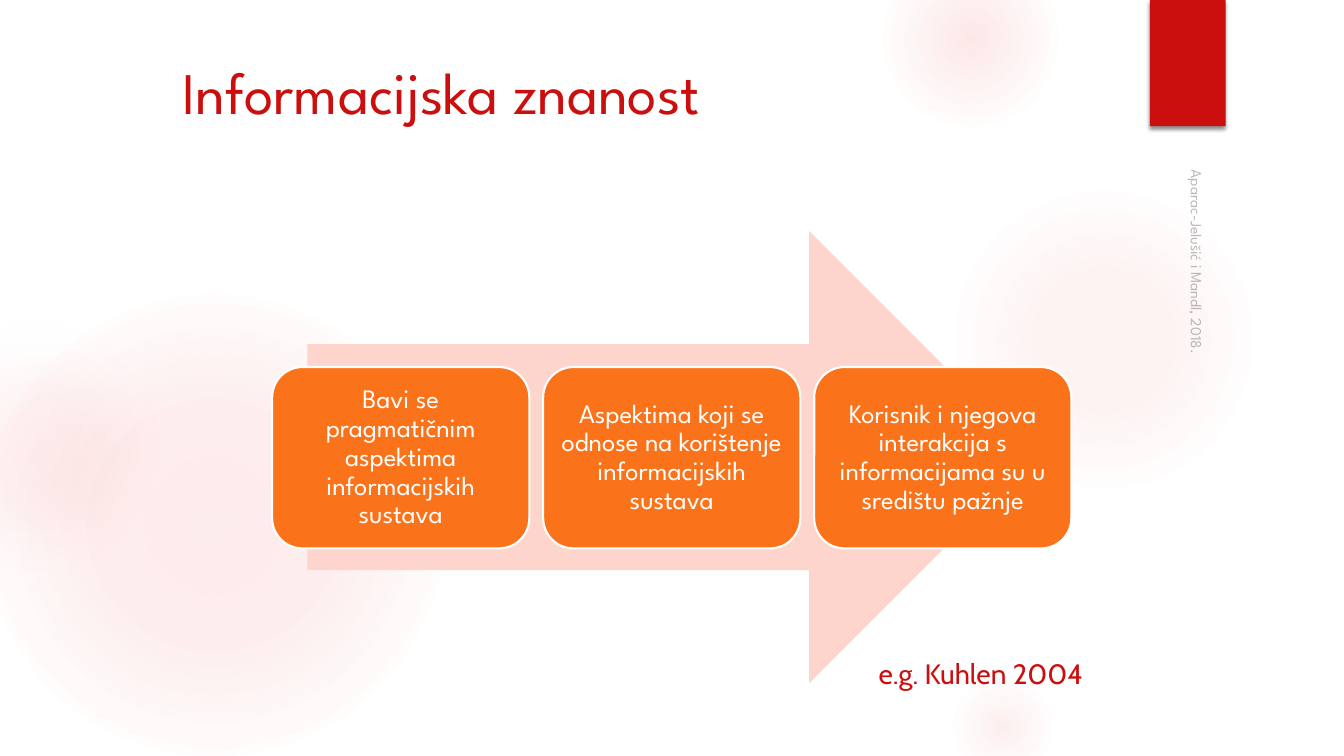
from dataclasses import dataclass

import lxml.etree
import pptx
import pptx.dml.color
import pptx.enum.shapes
import pptx.enum.text
import pptx.oxml
import pptx.oxml.ns
import pptx.util

Cm = pptx.util.Cm
Pt = pptx.util.Pt
Kind = pptx.enum.shapes.MSO_SHAPE
Align = pptx.enum.text.PP_ALIGN
Anchor = pptx.enum.text.MSO_ANCHOR
qn = pptx.oxml.ns.qn

RED = "CB0F0F"
ORANGE = "FA731A"
PINK = "FDD5CD"
GLOW = "F35C5C"
WHITE = "FFFFFF"
SPARTAN = "League Spartan"


@dataclass
class Box:
    left: float
    top: float
    width: float
    height: float

    def place(self) -> tuple:
        return tuple(Cm(n) for n in (self.left, self.top, self.width, self.height))


@dataclass
class Glow:
    left: float
    top: float
    size: float
    stops: tuple  # (position %, opacity %)
    edge: str = GLOW


@dataclass
class Label:
    box: Box
    text: str
    size: float
    font: str
    hue: str
    wrap: bool = True
    anchor: Anchor = Anchor.TOP
    turn: float = 0


GLOWS = (
    Glow(-0.43, 7.42, 11.63, ((0, 11), (36, 10), (75, 0))),
    Glow(-2.34, 8.05, 6.55, ((0, 8), (36, 5), (71, 0)), "F3F3F3"),
    Glow(23.9, 4.65, 7.82, ((0, 7), (36, 6), (69, 0))),
    Glow(22.23, -1.27, 4.45, ((0, 14), (36, 7), (73, 0))),
    Glow(23.9, 16.94, 2.74, ((0, 10), (31, 5), (66, 0))),
)
CARDS = (
    "Bavi se pragmatičnim aspektima informacijskih sustava",
    "Aspektima koji se odnose na korištenje informacijskih sustava",
    "Korisnik i njegova interakcija s informacijama su u središtu pažnje",
)
LABELS = (
    Label(Box(4.34, 1.27, 23.6, 3.89), "Informacijska znanost", 42, SPARTAN, RED),
    Label(Box(21.89, 16.41, 5.84, 1.12), "e.g. Kuhlen 2004", 20, "Cabin", RED, wrap=False),
    Label(Box(24.87, 8.97, 10.72, 0.84), "Aparac-Jelušić i Mandl, 2018.", 11, SPARTAN,
          "8C8C8C", anchor=Anchor.BOTTOM, turn=90),
)


def tint(hue: str) -> pptx.dml.color.RGBColor:
    return pptx.dml.color.RGBColor.from_string(hue)


def node(tag: str, body: str, attrs: str = ""):
    """Build one element of the drawing namespace."""
    space = pptx.oxml.ns.nsdecls("a")
    return pptx.oxml.parse_xml(f"<a:{tag} {space} {attrs}>{body}</a:{tag}>")


def shade(hue: str, alpha: int) -> str:
    return f'<a:srgbClr val="{hue}"><a:alpha val="{alpha * 1000}"/></a:srgbClr>'


def draw(slide, kind: Kind, box: Box, hue: str):
    shape = slide.shapes.add_shape(kind, *box.place())
    shape.shadow.inherit = False
    shape.fill.solid()
    shape.fill.fore_color.rgb = tint(hue)
    shape.line.fill.background()
    return shape


def write(frame, text: str, size: float, font: str, hue: str):
    run = frame.paragraphs[0].add_run()
    run.text = text
    run.font.size = Pt(size)
    run.font.name = font
    run.font.color.rgb = tint(hue)
    return run


def add_glow(slide, glow: Glow) -> None:
    box = Box(glow.left, glow.top, glow.size, glow.size)
    shape = draw(slide, Kind.OVAL, box, GLOW)
    hues = (GLOW, GLOW, glow.edge)
    stops = "".join(
        f'<a:gs pos="{pos * 1000}">{shade(hue, alpha)}</a:gs>'
        for (pos, alpha), hue in zip(glow.stops, hues)
    )
    rect = '<a:fillToRect l="50000" t="50000" r="50000" b="50000"/>'
    grad = node("gradFill", f'<a:gsLst>{stops}</a:gsLst><a:path path="circle">{rect}</a:path>')
    props = shape.element.spPr
    props.replace(props.find(qn("a:solidFill")), grad)


def add_tab(slide) -> None:
    """Draw the red ribbon with its soft drop shadow."""
    shape = draw(slide, Kind.RECTANGLE, Box(28.98, 0, 1.91, 3.18), RED)
    cast = node("outerShdw", shade("000000", 45),
                f'blurRad="{Pt(3)}" dist="{Pt(2)}" dir="5400000" rotWithShape="0"')
    shape.element.spPr.find(qn("a:effectLst")).append(cast)


def add_card(slide, box: Box, text: str) -> None:
    card = draw(slide, Kind.ROUNDED_RECTANGLE, box, ORANGE)
    card.line.color.rgb = tint(WHITE)
    card.line.width = Pt(1.5)
    frame = card.text_frame
    frame.word_wrap = True
    frame.vertical_anchor = Anchor.MIDDLE
    frame.margin_left = frame.margin_right = Cm(0.2)
    frame.margin_top = frame.margin_bottom = Cm(0.2)
    frame.paragraphs[0].alignment = Align.CENTER
    frame.paragraphs[0].line_spacing = 0.9
    write(frame, text, 19, SPARTAN, WHITE)


def add_label(slide, label: Label):
    shape = slide.shapes.add_textbox(*label.box.place())
    shape.rotation = label.turn
    frame = shape.text_frame
    frame.word_wrap = label.wrap
    frame.vertical_anchor = label.anchor
    return write(frame, label.text, label.size, label.font, label.hue)


def main() -> None:
    deck = pptx.Presentation()
    deck.slide_width, deck.slide_height = Cm(33.87), Cm(19.05)
    slide = deck.slides.add_slide(deck.slide_layouts[6])
    for glow in GLOWS:
        add_glow(slide, glow)
    add_tab(slide)
    draw(slide, Kind.RIGHT_ARROW, Box(7.75, 5.82, 18.34, 11.4), PINK)
    for i, text in enumerate(CARDS):
        add_card(slide, Box(6.86 + i * 6.83, 9.25, 6.48, 4.57), text)
    runs = [add_label(slide, label) for label in LABELS]
    faint = runs[-1].font.fill._xPr.find(qn("a:solidFill"))[0]
    lxml.etree.SubElement(faint, qn("a:alpha"), val="60000")
    deck.save("out.pptx")


if __name__ == "__main__":
    main()
